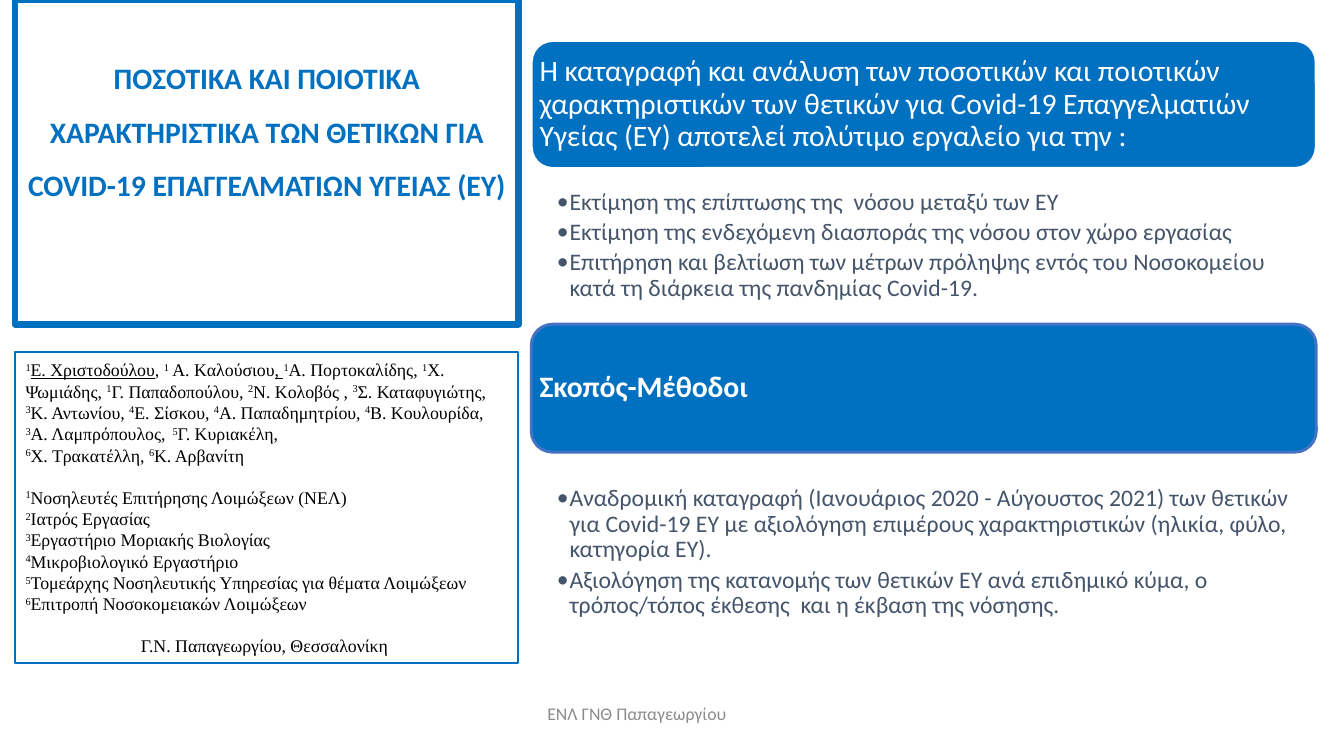
from dataclasses import dataclass

from lxml.etree import SubElement
from pptx import Presentation
from pptx.dml.color import RGBColor as Rgb
from pptx.enum.shapes import MSO_SHAPE as Kind
from pptx.enum.text import MSO_ANCHOR as Anchor, MSO_AUTO_SIZE as Fit, PP_ALIGN as Align
from pptx.oxml.ns import qn
from pptx.shapes.autoshape import Shape
from pptx.slide import Slide
from pptx.text.text import TextFrame as Frame
from pptx.util import Inches, Pt


@dataclass(frozen=True)
class Theme:
    blue: str = "0070C0"
    rim: str = "4472C4"
    white: str = "FFFFFF"
    black: str = "000000"
    slate: str = "44546A"
    gray: str = "8C8C8C"
    sans: str = "Calibri"
    serif: str = "Times New Roman"
    head: float = 10
    body: float = 8
    small: float = 6


@dataclass(frozen=True)
class Box:
    left: float
    top: float
    width: float
    height: float

    def lengths(self) -> list[int]:
        return [Inches(n) for n in (self.left, self.top, self.width, self.height)]


@dataclass(frozen=True)
class Panel:
    head: str
    bold: bool
    rim: str
    top: float
    list_top: float
    list_height: float
    points: tuple[str, ...]


THEME = Theme()
PAGE = 6.3
LEFT, WIDE = 0.07, 2.36
RIGHT, SPAN, BAND = 2.49, 3.68, 0.6
PAD = (0.05, 0.02, 0.05, 0.02)

TITLE = "ΠΟΣΟΤΙΚΑ ΚΑΙ ΠΟΙΟΤΙΚΑ ΧΑΡΑΚΤΗΡΙΣΤΙΚΑ ΤΩΝ ΘΕΤΙΚΩΝ ΓΙΑ COVID-19 ΕΠΑΓΓΕΛΜΑΤΙΩΝ ΥΓΕΙΑΣ (ΕΥ)"
PANELS = (
    Panel(
        "Η καταγραφή και ανάλυση των ποσοτικών και ποιοτικών χαρακτηριστικών των θετικών "
        "για Covid-19 Επαγγελματιών Υγείας (ΕΥ) αποτελεί πολύτιμο εργαλείο για την :",
        False, THEME.white, 0.19, 0.88, 0.58,
        ("Εκτίμηση της επίπτωσης της  νόσου μεταξύ των ΕΥ",
         "Εκτίμηση της ενδεχόμενη διασποράς της νόσου στον χώρο εργασίας",
         "Επιτήρηση και βελτίωση των μέτρων πρόληψης εντός του Νοσοκομείου "
         "κατά τη διάρκεια της πανδημίας Covid-19."),
    ),
    Panel(
        "Σκοπός-Μέθοδοι", True, THEME.rim, 1.52, 2.27, 0.67,
        ("Αναδρομική καταγραφή (Ιανουάριος 2020 - Αύγουστος 2021) των θετικών για Covid-19 EY "
         "με αξιολόγηση επιμέρους χαρακτηριστικών (ηλικία, φύλο, κατηγορία ΕΥ).",
         "Αξιολόγηση της κατανομής των θετικών ΕΥ ανά επιδημικό κύμα, ο τρόπος/τόπος έκθεσης  "
         "και η έκβαση της νόσησης."),
    ),
)
# A caret raises the next digit; underscores enclose underlined text.
AUTHORS = (
    "^1_Ε. Χριστοδούλου_, ^1 Α. Kαλούσιου_, _^1Α. Πορτοκαλίδης, ^1Χ. Ψωμιάδης, "
    "^1Γ. Παπαδοπούλου, ^2Ν. Κολοβός , ^3Σ. Καταφυγιώτης, ^3Κ. Αντωνίου, ^4Ε. Σίσκου, "
    "^4Α. Παπαδημητρίου, ^4Β. Κουλουρίδα, ^3Α. Λαμπρόπουλος, ^ 5Γ. Κυριακέλη,",
    "^6Χ. Τρακατέλλη, ^6Κ. Αρβανίτη",
)
UNITS = (
    "Νοσηλευτές Επιτήρησης Λοιμώξεων (ΝΕΛ)",
    "Ιατρός Εργασίας",
    "Εργαστήριο Μοριακής Βιολογίας",
    "Μικροβιολογικό Εργαστήριο",
    "Τομεάρχης Νοσηλευτικής Υπηρεσίας για θέματα Λοιμώξεων",
    "Επιτροπή Νοσοκομειακών Λοιμώξεων",
)
PLACE = "Γ.Ν. Παπαγεωργίου, Θεσσαλονίκη "
FOOTER = "ΕΝΛ ΓΝΘ Παπαγεωργίου"


def pieces(text: str) -> list[tuple[str, bool, bool]]:
    """Split marked text into (text, raised, underlined) parts."""
    parts = []
    for i, chunk in enumerate(text.split("_")):
        first, *marks = chunk.split("^")
        parts.append((first, False, i % 2 == 1))
        for mark in marks:
            cut = len(mark) - len(mark.lstrip()) + 1
            parts += [(mark[:cut], True, False), (mark[cut:], False, False)]
    return [part for part in parts if part[0]]


def setup(frame: Frame, pad: tuple[float, ...] = PAD, anchor: Anchor = Anchor.MIDDLE) -> None:
    frame.word_wrap = True
    frame.auto_size = Fit.NONE
    frame.vertical_anchor = anchor
    (frame.margin_left, frame.margin_top,
     frame.margin_right, frame.margin_bottom) = [Inches(n) for n in pad]


def write(frame: Frame, text: str, *, size: float, color: str, font: str = THEME.sans,
          bold: bool = False, align: Align = Align.LEFT, lead: float = 1.0,
          before: float = 0, after: float = 0, bullet: bool = False) -> None:
    """Fill the first paragraph if it is empty, else add one."""
    para = frame.paragraphs[0]
    if para.runs:
        para = frame.add_paragraph()
    para.alignment, para.line_spacing = align, lead
    para.space_before, para.space_after = Pt(before), Pt(after)
    if bullet:
        para.level = 1
        props = para._p.get_or_add_pPr()
        props.set("marL", str(Inches(0.06)))
        props.set("indent", str(-Inches(0.06)))
        SubElement(props, qn("a:buFont"), typeface=font)
        SubElement(props, qn("a:buChar"), char="•")
    for part, raised, under in pieces(text):
        run = para.add_run()
        run.text = part
        face = run.font
        face.name, face.size, face.bold = font, Pt(size), bold
        face.underline = under
        face.color.rgb = Rgb.from_string(color)
        if raised:
            face._element.set("baseline", "30000")


def paint(shape: Shape, fill: str | None, line: str, width: float) -> None:
    if fill:
        shape.fill.solid()
        shape.fill.fore_color.rgb = Rgb.from_string(fill)
    else:
        shape.fill.background()
    shape.line.color.rgb = Rgb.from_string(line)
    shape.line.width = Pt(width)


def block(slide: Slide, kind: Kind, box: Box, fill: str | None, line: str, width: float) -> Shape:
    shape = slide.shapes.add_shape(kind, *box.lengths())
    shape.shadow.inherit = False
    paint(shape, fill, line, width)
    return shape


def label(slide: Slide, box: Box) -> Frame:
    return slide.shapes.add_textbox(*box.lengths()).text_frame


def draw_title(slide: Slide) -> None:
    title = slide.shapes.title
    title.left, title.top, title.width, title.height = Box(LEFT, 0, WIDE, 1.52).lengths()
    paint(title, THEME.white, THEME.blue, 2.25)
    setup(title.text_frame, (0.05, 0.02, 0.05, 0.39))
    write(title.text_frame, TITLE, size=THEME.head, color=THEME.blue, bold=True,
          align=Align.CENTER, lead=1.5)


def draw_panel(slide: Slide, panel: Panel) -> None:
    band = block(slide, Kind.ROUNDED_RECTANGLE, Box(RIGHT, panel.top, SPAN, BAND),
                 THEME.blue, panel.rim, 1)
    setup(band.text_frame, (0.01, 0.01, 0.01, 0.01))
    write(band.text_frame, panel.head, size=THEME.head, color=THEME.white,
          bold=panel.bold, lead=0.9)
    notes = label(slide, Box(RIGHT, panel.list_top, SPAN, panel.list_height))
    setup(notes, (0.12, 0.01, 0.08, 0.01), Anchor.TOP)
    for point in panel.points:
        write(notes, point, size=THEME.body, color=THEME.slate, lead=0.9, after=1.6, bullet=True)


def draw_team(slide: Slide) -> None:
    frame = block(slide, Kind.RECTANGLE, Box(LEFT, 1.65, WIDE, 1.46),
                  None, THEME.blue, 0.75).text_frame
    setup(frame)
    look = dict(size=THEME.small, color=THEME.black, font=THEME.serif)
    for line in AUTHORS:
        write(frame, line, **look)
    for i, unit in enumerate(UNITS, 1):
        write(frame, f"^{i}{unit}", before=7 if i == 1 else 0, **look)
    write(frame, PLACE, align=Align.CENTER, before=7, **look)


def draw_footer(slide: Slide) -> None:
    frame = label(slide, Box(1.92, 3.25, 2.13, 0.19))
    setup(frame)
    write(frame, FOOTER, size=THEME.small, color=THEME.gray, align=Align.CENTER)


def main() -> None:
    deck = Presentation()
    deck.slide_width, deck.slide_height = Inches(PAGE), Inches(PAGE * 9 / 16)
    slide = deck.slides.add_slide(deck.slide_layouts[5])
    draw_title(slide)
    draw_footer(slide)
    for panel in PANELS:
        draw_panel(slide, panel)
    draw_team(slide)
    deck.save("out.pptx")


if __name__ == "__main__":
    main()
